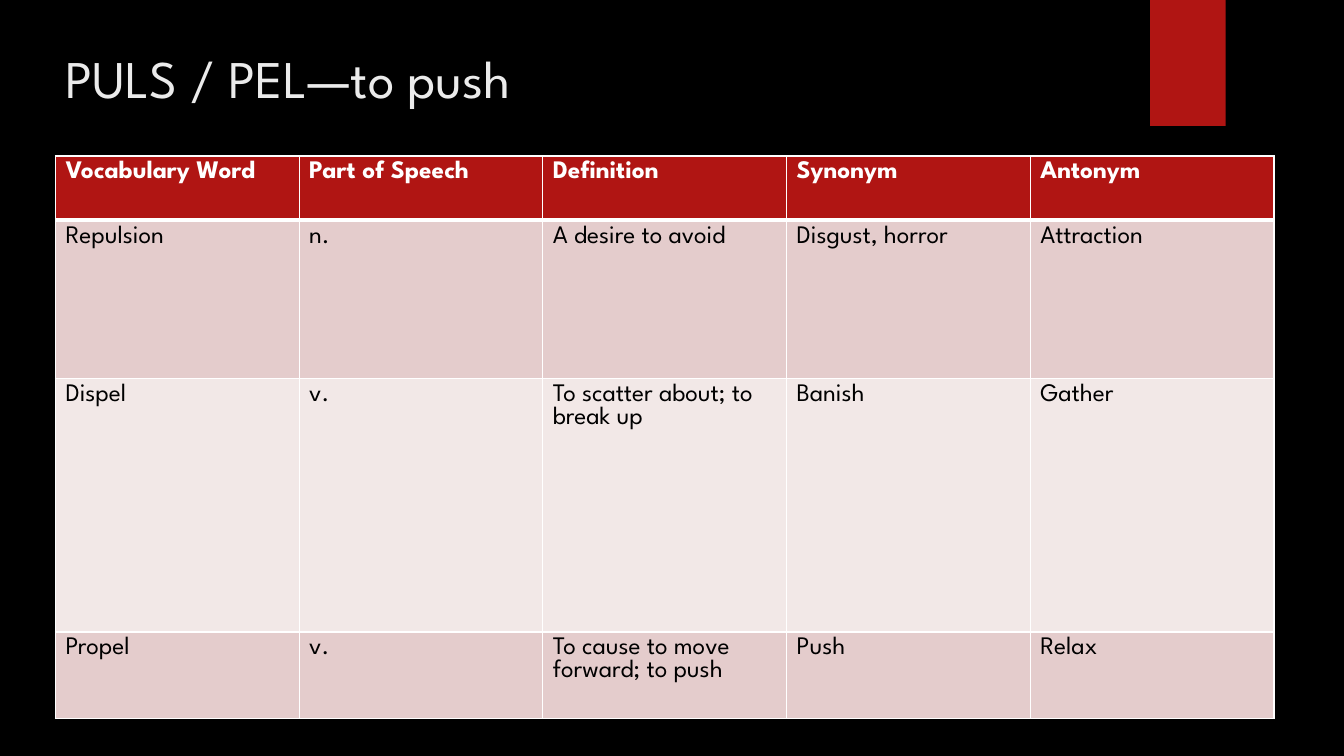
from lxml import etree
from pptx import Presentation
from pptx.dml.color import RGBColor
from pptx.enum.shapes import MSO_SHAPE
from pptx.enum.text import MSO_ANCHOR, MSO_AUTO_SIZE, PP_ALIGN
from pptx.oxml.ns import qn
from pptx.util import Pt

RECTANGLE = MSO_SHAPE.RECTANGLE
TOP = MSO_ANCHOR.TOP
LEFT = PP_ALIGN.LEFT
NO_FIT = MSO_AUTO_SIZE.NONE

FONT = "League Spartan"
COLORS = {
    "background": "000000",
    "accent": "B01513",
    "title": "EBEBEB",
    "border": "FFFFFF",
    "header_text": "FFFFFF",
    "body_text": "000000",
    "odd_row": "E4CCCC",
    "even_row": "F2E8E7",
}
TITLE_LAYOUT = 5
HEADER_RULE = 3
THIN_RULE = 1

ROW_HEIGHTS = [46, 113, 181, 62]
VOCABULARY = [
    ["Vocabulary Word", "Part of Speech", "Definition", "Synonym", "Antonym"],
    ["Repulsion", "n.", "A desire to avoid", "Disgust, horror", "Attraction"],
    ["Dispel", "v.", "To scatter about; to break up", "Banish", "Gather"],
    ["Propel", "v.", "To cause to move forward; to push", "Push", "Relax"],
]


def color(name):
    return RGBColor.from_string(COLORS[name])


def paint(fill, name):
    fill.solid()
    fill.fore_color.rgb = color(name)


def write(frame, text, size, color_name, bold=False):
    para = frame.paragraphs[0]
    para.alignment = LEFT
    span = para.add_run()
    span.text = text
    formats = {"name": FONT, "size": Pt(size), "bold": bold}
    for key, value in formats.items():
        setattr(span.font, key, value)
    span.font.color.rgb = color(color_name)


def add_title(page, text, left, top, width, height):
    title = page.shapes.title
    place = {"left": left, "top": top, "width": width, "height": height}
    for key, value in place.items():
        setattr(title, key, Pt(value))
    frame = title.text_frame
    formats = {"word_wrap": True, "auto_size": NO_FIT,
               "vertical_anchor": TOP, "margin_top": Pt(17)}
    for key, value in formats.items():
        setattr(frame, key, value)
    write(frame, text, 37.8, "title")


def add_ribbon(page, left, top, width, height):
    ribbon = page.shapes.add_shape(
        RECTANGLE, Pt(left), Pt(top), Pt(width), Pt(height))
    ribbon.shadow.inherit = False
    paint(ribbon.fill, "accent")
    ribbon.line.fill.background()


def add_borders(cell, widths):
    """Draw solid cell edges; widths maps L, R, T and B to points."""
    properties = cell._tc.get_or_add_tcPr()
    for side, width in widths.items():
        line = etree.SubElement(properties, qn(f"a:ln{side}"), w=str(Pt(width)))
        solid = etree.SubElement(line, qn("a:solidFill"))
        etree.SubElement(solid, qn("a:srgbClr"), val=COLORS["border"])


def add_vocabulary_table(page, rows, left, top, width, heights):
    table = page.shapes.add_table(
        len(rows), len(rows[0]), Pt(left), Pt(top), Pt(width),
        Pt(sum(heights))).table
    for column in table.columns:
        column.width = Pt(width / len(rows[0]))
    for row, height in zip(table.rows, heights):
        row.height = Pt(height)
    for row_index, texts in enumerate(rows):
        header = row_index == 0
        band = "odd_row" if row_index % 2 else "even_row"
        widths = {
            "L": THIN_RULE,
            "R": THIN_RULE,
            "T": HEADER_RULE if row_index == 1 else THIN_RULE,
            "B": HEADER_RULE if header else THIN_RULE,
        }
        for column_index, text in enumerate(texts):
            cell = table.cell(row_index, column_index)
            add_borders(cell, widths)
            paint(cell.fill, "accent" if header else band)
            cell.vertical_anchor = TOP
            write(cell.text_frame, text, 18,
                  "header_text" if header else "body_text", header)


def build_vocabulary_slide(deck):
    page = deck.slides.add_slide(deck.slide_layouts[TITLE_LAYOUT])
    paint(page.background.fill, "background")
    add_ribbon(page, 821.5, 0, 54, 90)
    add_title(page, "PULS / PEL—to push", 39.6, 15.8, 636.5, 79.2)
    add_vocabulary_table(page, VOCABULARY, 39.6, 111.4, 870.5, ROW_HEIGHTS)


def main():
    deck = Presentation()
    deck.slide_width = Pt(960)
    deck.slide_height = Pt(540)
    build_vocabulary_slide(deck)
    deck.save("out.pptx")


if __name__ == "__main__":
    main()
